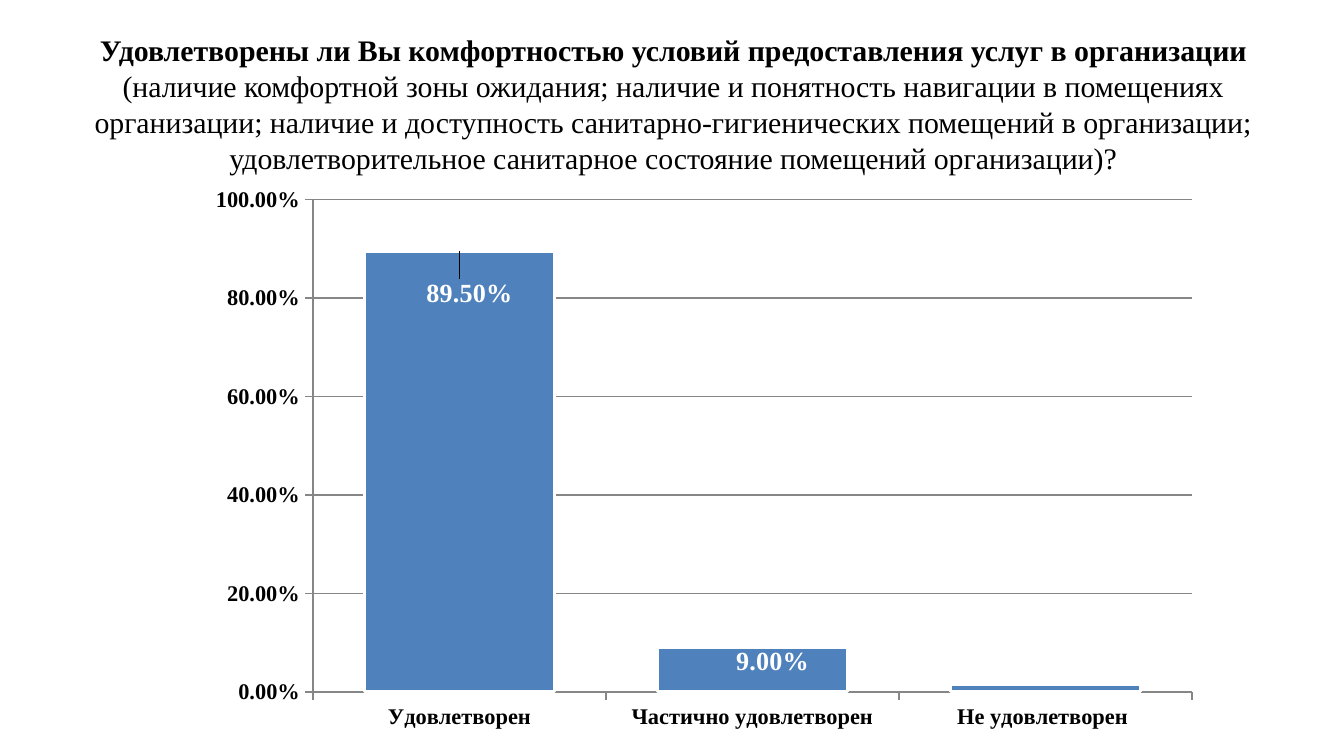
from lxml import etree
from pptx import Presentation
from pptx.chart.data import CategoryChartData
from pptx.dml.color import RGBColor
from pptx.enum.chart import XL_CHART_TYPE as CT, XL_LABEL_POSITION as LP, XL_TICK_MARK as TM
from pptx.enum.text import MSO_ANCHOR, MSO_AUTO_SIZE, PP_ALIGN
from pptx.oxml.ns import qn
from pptx.util import Cm, Pt

BLACK = RGBColor(0, 0, 0)
WHITE = RGBColor(255, 255, 255)
BLUE = RGBColor(0x4F, 0x81, 0xBD)
GRAY = RGBColor(0x86, 0x86, 0x86)
FONT = "Times New Roman"


def format_font(font, size, bold=True, color=BLACK):
    font.name, font.size, font.bold = FONT, Pt(size), bold
    font.color.rgb = color


def add_layout(parent, index, **values):
    layout = etree.Element(qn("c:layout"))
    manual = etree.SubElement(layout, qn("c:manualLayout"))
    for tag, value in values.items():
        etree.SubElement(manual, qn("c:" + tag)).set("val", str(value))
    parent.insert(index, layout)


prs = Presentation()
prs.slide_width, prs.slide_height = Cm(25.4), Cm(14.29)
s = prs.slides.add_slide(prs.slide_layouts[5])

# Title: the question in bold, its explanation in regular
title = s.shapes.title
title.left, title.top, title.width, title.height = Cm(1.3), Cm(0.36), Cm(22.86), Cm(3.2)
tf = title.text_frame
tf.word_wrap = True
tf.auto_size = MSO_AUTO_SIZE.NONE
tf.vertical_anchor = MSO_ANCHOR.MIDDLE
p = tf.paragraphs[0]
p.alignment = PP_ALIGN.CENTER
for text, bold in [
    ("Удовлетворены ли Вы комфортностью условий предоставления услуг в организации ", True),
    ("(наличие комфортной зоны ожидания; наличие и понятность навигации в помещениях "
     "организации; наличие и доступность санитарно-гигиенических помещений в организации; "
     "удовлетворительное санитарное состояние помещений организации)?", False),
]:
    r = p.add_run()
    r.text = text
    format_font(r.font, 16, bold)

# Chart
data = CategoryChartData(number_format="0.00%")
data.categories = ["Удовлетворен", "Частично удовлетворен", "Не удовлетворен "]
data.add_series("Series 1", [0.895, 0.09, 0.015])
chart = s.shapes.add_chart(CT.COLUMN_CLUSTERED, Cm(3.71), Cm(3.35), Cm(19.2), Cm(10.67), data).chart
chart.has_legend = chart.has_title = False
chart.font.name, chart.font.size = "Calibri", Pt(10)
chart.font.color.rgb = BLACK
plot = chart.plots[0]
plot.gap_width = 54
plot.vary_by_categories = False

# Plot area position
plot_area = plot._element.getparent()
for old in plot_area.findall(qn("c:layout")):
    plot_area.remove(old)
add_layout(plot_area, 0, layoutTarget="inner", xMode="edge", yMode="edge",
           x=0.115, y=0.04, w=0.865, h=0.872)

# Axes
for axis in (chart.category_axis, chart.value_axis):
    format_font(axis.tick_labels.font, 12)
    axis.major_tick_mark, axis.minor_tick_mark = TM.OUTSIDE, TM.NONE
    axis.format.line.color.rgb = GRAY
    axis.format.line.width = Pt(0.75)
axis = chart.value_axis
axis.minimum_scale, axis.maximum_scale, axis.major_unit = 0, 1, 0.2
axis.tick_labels.number_format = "0.00%"
axis.tick_labels.number_format_is_linked = False
axis.has_major_gridlines = True
axis.major_gridlines.format.line.color.rgb = GRAY
axis.major_gridlines.format.line.width = Pt(0.75)

# Columns
series = plot.series[0]
series.format.fill.solid()
series.format.fill.fore_color.rgb = BLUE
series.format.line.color.rgb = WHITE
series.format.line.width = Pt(1.5)

# Value labels, shifted down from the column tops
labels = series.data_labels
labels.show_value = True
labels.number_format, labels.number_format_is_linked = "0.00%", False
format_font(labels.font, 14, color=WHITE)
for i, (dx, dy) in enumerate([(0.01, 0.11), (0.02, 0.06), (0.01, 0)]):
    label = series.points[i].data_label
    format_font(label.font, 14, color=WHITE)
    label.position = LP.OUTSIDE_END
    add_layout(labels._element.findall(qn("c:dLbl"))[i], 1, x=dx, y=dy)

prs.save("out.pptx")
